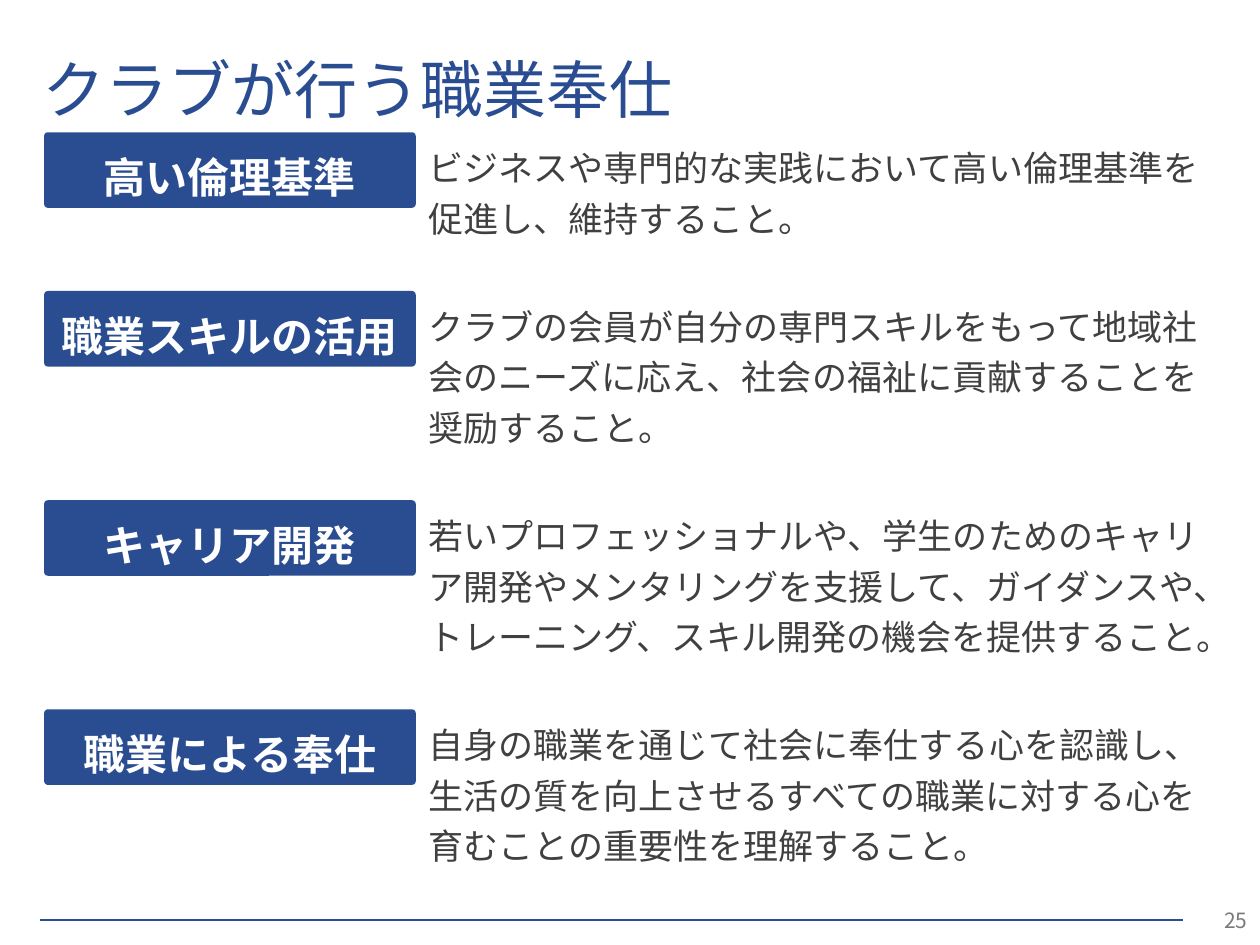
from typing import NamedTuple

from lxml import etree
from pptx import Presentation
from pptx import util as u
from pptx.dml.color import RGBColor
from pptx.enum import shapes, text
from pptx.oxml.ns import qn

FONT = "Noto Sans CJK JP"
NAVY, WHITE, DARK, GRAY = "2A4D92", "FFFFFF", "404040", "797979"
WIDTH, HEIGHT = 10, 7.5
LABEL_LEFT, LABEL_WIDTH, LABEL_HEIGHT = 0.35, 2.95, 0.6
BODY_LEFT, BODY_WIDTH = LABEL_LEFT + LABEL_WIDTH, 6.34
FIRST_TOP, LINE_HEIGHT, BODY_MARGIN, ROW_GAP = 1.05, 0.4, 0.1, 0.36
RULE_LEFT, RULE_RIGHT, RULE_TOP = 0.32, 9.39, 7.3


class Area(NamedTuple):
    left: float
    top: float
    width: float
    height: float

    def lengths(self) -> list:
        return [u.Inches(value) for value in self]


class Style(NamedTuple):
    size: float
    color: str
    bold: bool = False
    align: text.PP_ALIGN = text.PP_ALIGN.LEFT
    line_spacing: float = 1.0
    space_after: float = 0


class Activity(NamedTuple):
    label: str
    description: str
    lines: int


TITLE = Style(36, NAVY, line_spacing=0.9)
LABEL = Style(24, WHITE, True, text.PP_ALIGN.CENTER, 1.2)
BODY = Style(20, DARK, line_spacing=1.2, space_after=12)
PAGE_NUMBER = Style(12, GRAY, align=text.PP_ALIGN.RIGHT)

ACTIVITIES = [
    Activity("高い倫理基準",
             "ビジネスや専門的な実践において高い倫理基準を促進し、維持すること。", 2),
    Activity("職業スキルの活用",
             "クラブの会員が自分の専門スキルをもって地域社会のニーズに応え、"
             "社会の福祉に貢献することを奨励すること。", 3),
    Activity("キャリア開発",
             "若いプロフェッショナルや、学生のためのキャリア開発やメンタリングを支援して、"
             "ガイダンスや、トレーニング、スキル開発の機会を提供すること。", 3),
    Activity("職業による奉仕",
             "自身の職業を通じて社会に奉仕する心を認識し、生活の質を向上させる"
             "すべての職業に対する心を育むことの重要性を理解すること。", 3),
]


def rgb(color: str) -> RGBColor:
    return RGBColor.from_string(color)


def write(shape, words: str, style: Style, anchor=text.MSO_ANCHOR.MIDDLE, wrap=True) -> None:
    frame = shape.text_frame
    frame.word_wrap = wrap
    frame.vertical_anchor = anchor
    paragraph = frame.paragraphs[0]
    paragraph.alignment = style.align
    paragraph.line_spacing = style.line_spacing
    paragraph.space_after = u.Pt(style.space_after)
    run = paragraph.add_run()
    run.text = words
    run.font.size = u.Pt(style.size)
    run.font.bold = style.bold
    run.font.color.rgb = rgb(style.color)
    run.font.name = FONT
    east_asian = etree.SubElement(run.font._element, qn("a:ea"))
    east_asian.set("typeface", FONT)


def add_filled(slide, kind, area: Area, color: str):
    shape = slide.shapes.add_shape(kind, *area.lengths())
    shape.shadow.inherit = False
    shape.fill.solid()
    shape.fill.fore_color.rgb = rgb(color)
    shape.line.fill.background()
    return shape


def add_label(slide, words: str, top: float) -> None:
    area = Area(LABEL_LEFT, top, LABEL_WIDTH, LABEL_HEIGHT)
    shape = add_filled(slide, shapes.MSO_SHAPE.ROUNDED_RECTANGLE, area, NAVY)
    shape.adjustments[0] = 0.05
    shape.text_frame.margin_top = u.Inches(0.08)
    write(shape, words, LABEL, wrap=False)


def add_activities(slide) -> None:
    top = FIRST_TOP
    for activity in ACTIVITIES:
        height = activity.lines * LINE_HEIGHT + BODY_MARGIN
        add_label(slide, activity.label, top)
        body = slide.shapes.add_textbox(*Area(BODY_LEFT, top, BODY_WIDTH, height).lengths())
        write(body, activity.description, BODY, text.MSO_ANCHOR.TOP)
        body.text_frame.auto_size = text.MSO_AUTO_SIZE.SHAPE_TO_FIT_TEXT
        top += height + ROW_GAP


def add_footer(slide) -> None:
    ends = (RULE_RIGHT, RULE_TOP, RULE_LEFT, RULE_TOP)
    rule = slide.shapes.add_connector(shapes.MSO_CONNECTOR.STRAIGHT, *map(u.Inches, ends))
    rule.line.color.rgb = rgb(NAVY)
    rule.line.width = u.Pt(1)
    etree.SubElement(rule._element.spPr, qn("a:effectLst"))
    area = Area(RULE_RIGHT, 7.1, WIDTH - RULE_RIGHT, HEIGHT - 7.1)
    number = add_filled(slide, shapes.MSO_SHAPE.RECTANGLE, area, WHITE)
    write(number, "25", PAGE_NUMBER)


def main() -> None:
    presentation = Presentation()
    presentation.slide_width = u.Inches(WIDTH)
    presentation.slide_height = u.Inches(HEIGHT)
    slide = presentation.slides.add_slide(presentation.slide_layouts[6])
    add_footer(slide)
    title = slide.shapes.add_textbox(*Area(0.24, 0.44, 9.72, 0.6).lengths())
    write(title, "クラブが行う職業奉仕", TITLE)
    add_activities(slide)
    presentation.save("out.pptx")


if __name__ == "__main__":
    main()
